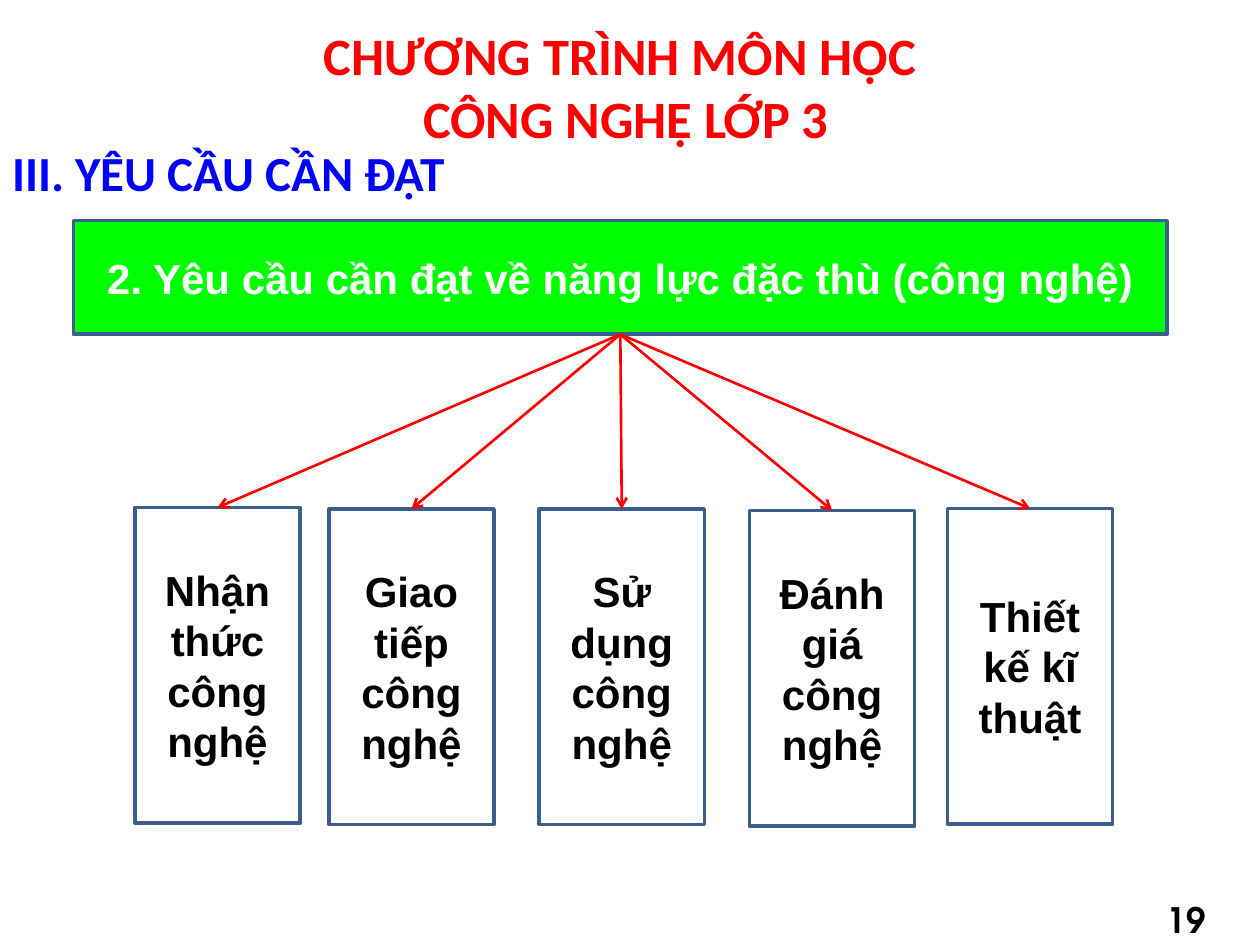
from lxml import etree
from pptx import Presentation
from pptx.dml.color import RGBColor
from pptx.enum import shapes, text
from pptx.oxml import ns
from pptx.util import Cm, Pt

RED = RGBColor(0xFF, 0x00, 0x00)
BLUE = RGBColor(0x00, 0x00, 0xFF)
GREEN = RGBColor(0x00, 0xFF, 0x00)
WHITE = RGBColor(0xFF, 0xFF, 0xFF)
BLACK = RGBColor(0x00, 0x00, 0x00)
STEEL = RGBColor(0x3A, 0x5F, 0x8C)

TITLE = "CHƯƠNG TRÌNH MÔN HỌC\v CÔNG NGHỆ LỚP 3"
SECTION = "III. YÊU CẦU CẦN ĐẠT"
REQUIREMENT = "2. Yêu cầu cần đạt về năng lực đặc thù (công nghệ)"
COMPETENCES = [
    ("Nhận thức công nghệ", 2.72, 10.23),
    ("Giao tiếp công nghệ", 6.63, 10.26),
    ("Sử dụng công nghệ", 10.87, 10.26),
    ("Đánh giá công nghệ", 15.11, 10.29),
    ("Thiết kế kĩ thuật", 19.1, 10.25),
]
PAGE = "19"
COMPETENCE_SIZE = (3.33, 6.36)


def write(holder, words, size=24, font="Arial", color=BLACK,
          align=text.PP_ALIGN.CENTER, anchor=text.MSO_ANCHOR.MIDDLE):
    frame = holder.text_frame
    frame.word_wrap = True
    frame.auto_size = text.MSO_AUTO_SIZE.NONE
    frame.vertical_anchor = anchor
    frame.text = words
    paragraph = frame.paragraphs[0]
    paragraph.alignment = align
    for run in paragraph.runs:
        run.font.name = font
        run.font.size = Pt(size)
        run.font.bold = True
        run.font.color.rgb = color


def add_box(slide, words, left, top, width, height, fill, color):
    box = slide.shapes.add_shape(
        shapes.MSO_SHAPE.RECTANGLE, Cm(left), Cm(top), Cm(width), Cm(height))
    box.shadow.inherit = False
    box.fill.solid()
    box.fill.fore_color.rgb = fill
    box.line.color.rgb = STEEL
    box.line.width = Pt(2)
    write(box, words, color=color)
    return box


def add_arrow(slide, source, target):
    arrow = slide.shapes.add_connector(shapes.MSO_CONNECTOR.STRAIGHT, 0, 0, 0, 0)
    arrow.begin_connect(source, 2)
    arrow.end_connect(target, 0)
    arrow.line.color.rgb = RED
    arrow.line.width = Pt(1.5)
    etree.SubElement(arrow.line._get_or_add_ln(), ns.qn("a:tailEnd"), type="arrow")
    etree.SubElement(arrow._element.spPr, ns.qn("a:effectLst"))


def main():
    deck = Presentation()
    deck.slide_width, deck.slide_height = Cm(25.4), Cm(19.05)
    slide = deck.slides.add_slide(deck.slide_layouts[5])

    title = slide.shapes.title
    title.left, title.top, title.width, title.height = Cm(1.07), Cm(0.15), Cm(22.86), Cm(3.18)
    write(title, TITLE, size=30, font="Calibri", color=RED)

    section = slide.shapes.add_textbox(Cm(0), Cm(2.74), Cm(22.83), Cm(1.45))
    write(section, SECTION, size=28, font="Calibri", color=BLUE,
          align=text.PP_ALIGN.LEFT, anchor=text.MSO_ANCHOR.TOP)

    page = slide.shapes.add_textbox(Cm(22.83), Cm(18.01), Cm(2.18), Cm(1.04))
    write(page, PAGE, size=20, font="TeX Gyre Adventor")

    requirement = add_box(slide, REQUIREMENT, 1.48, 4.45, 22.05, 2.29, GREEN, WHITE)
    competences = [add_box(slide, words, left, top, *COMPETENCE_SIZE, WHITE, BLACK)
                   for words, left, top in COMPETENCES]
    for competence in competences:
        add_arrow(slide, requirement, competence)

    deck.save("out.pptx")


if __name__ == "__main__":
    main()
